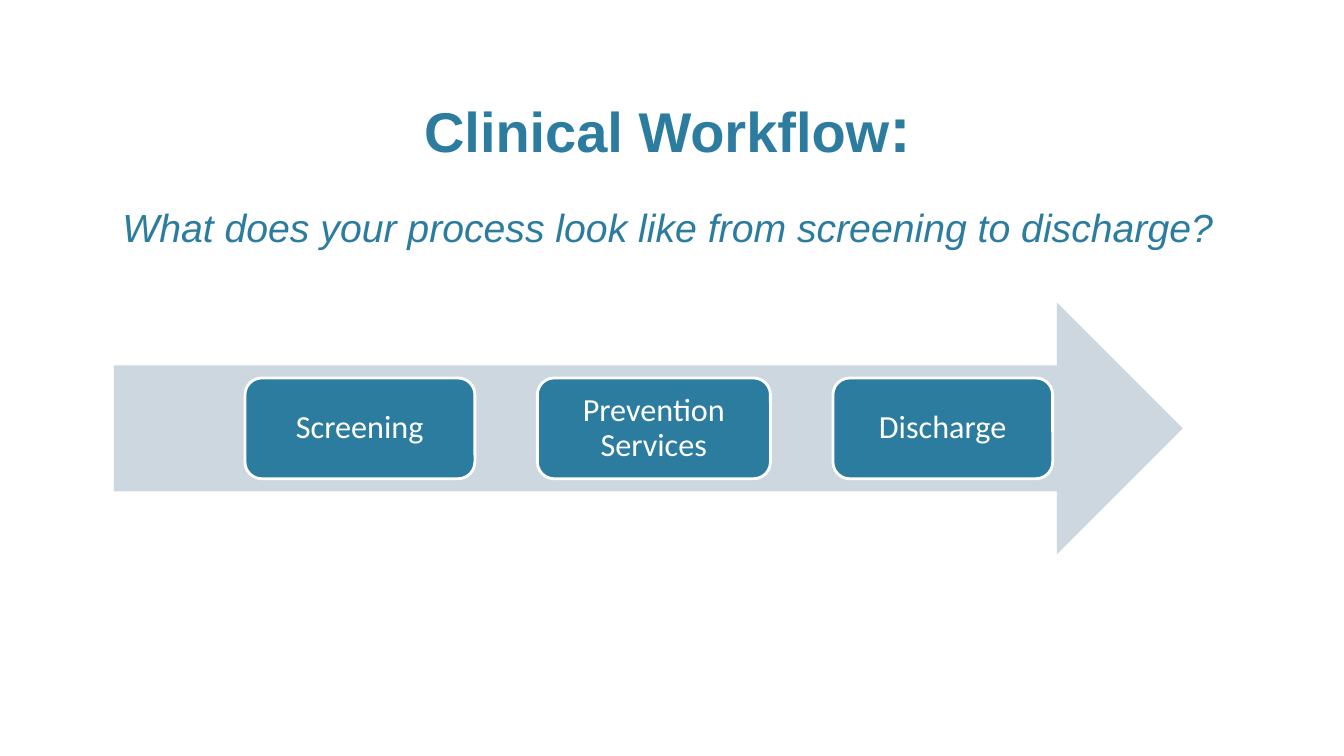
import pptx
import pptx.util
import pptx.dml.color
import pptx.enum.shapes
import pptx.enum.text
from dataclasses import dataclass

Pt = pptx.util.Pt
Inches = pptx.util.Inches
Shape = pptx.enum.shapes.MSO_SHAPE
Anchor = pptx.enum.text.MSO_ANCHOR
Align = pptx.enum.text.PP_ALIGN


@dataclass(frozen=True)
class Theme:
    teal: str = "2C7C9F"
    pale: str = "CDD7DF"
    white: str = "FFFFFF"
    head: str = "Arial"
    body: str = "Calibri"
    title: int = 40
    colon: int = 46
    sub: int = 28
    label: int = 23


class Board:
    """Slide laid out on a grid of 128 columns and 72 rows."""

    def __init__(self, deck, theme):
        self.theme = theme
        self.slide = deck.slides.add_slide(deck.slide_layouts[5])
        self.col = deck.slide_width / 128
        self.row = deck.slide_height / 72

    def place(self, left, top, width, height):
        return (round(left * self.col), round(top * self.row),
                round(width * self.col), round(height * self.row))

    def color(self, code):
        return pptx.dml.color.RGBColor.from_string(code)

    def style(self, font, name, size, code):
        font.name, font.size = name, Pt(size)
        font.color.rgb = self.color(code)

    def title(self, text, mark, sub, area):
        t = self.theme
        shape = self.slide.shapes.title
        shape.left, shape.top, shape.width, shape.height = self.place(*area)
        frame = shape.text_frame
        frame.auto_size = pptx.enum.text.MSO_AUTO_SIZE.NONE
        frame.vertical_anchor = Anchor.BOTTOM

        # Heading with a larger colon
        head = frame.paragraphs[0]
        for words, size in ((text, t.title), (mark, t.colon)):
            run = head.add_run()
            run.text = words
            self.style(run.font, t.head, size, t.teal)
            run.font.bold = True

        # Question below the heading
        ask = frame.add_paragraph()
        ask.text = sub
        ask.space_before = Pt(27)
        self.style(ask.font, t.head, t.sub, t.teal)
        ask.font.bold, ask.font.italic = False, True
        for para in frame.paragraphs:
            para.alignment = Align.CENTER

    def block(self, kind, area, fill, line=None):
        shape = self.slide.shapes.add_shape(kind, *self.place(*area))
        shape.shadow.inherit = False
        shape.fill.solid()
        shape.fill.fore_color.rgb = self.color(fill)
        if line:
            shape.line.color.rgb = self.color(line)
            shape.line.width = Pt(2)
        else:
            shape.line.fill.background()
        return shape

    def step(self, text, area):
        t = self.theme
        shape = self.block(Shape.ROUNDED_RECTANGLE, area, t.teal, t.white)
        frame = shape.text_frame
        frame.word_wrap = True
        frame.vertical_anchor = Anchor.MIDDLE
        frame.margin_left = frame.margin_right = Inches(0.15)
        frame.margin_top = frame.margin_bottom = Inches(0.15)
        para = frame.paragraphs[0]
        para.text = text
        para.alignment = Align.CENTER
        para.line_spacing = 0.9
        self.style(para.font, t.body, t.label, t.white)


def main():
    deck = pptx.Presentation()
    deck.slide_width, deck.slide_height = Inches(13.33), Inches(7.5)
    theme = Theme()
    board = Board(deck, theme)

    # Title and question
    board.title("Clinical Workflow", ":",
                "What does your process look like from screening to discharge?",
                (10.18, 5.57, 106.78, 18.72))

    # Arrow behind the steps
    board.block(Shape.RIGHT_ARROW, (10.85, 28.8, 101.8, 24), theme.pale)

    # Steps, left to right with equal gaps
    left, gap = 23.33, 5.95
    steps = (("Screening", 21.9), ("Prevention Services", 22.2),
             ("Discharge", 20.93))
    for text, width in steps:
        board.step(text, (left, 36, width, 9.6))
        left += width + gap

    deck.save("out.pptx")


if __name__ == "__main__":
    main()
